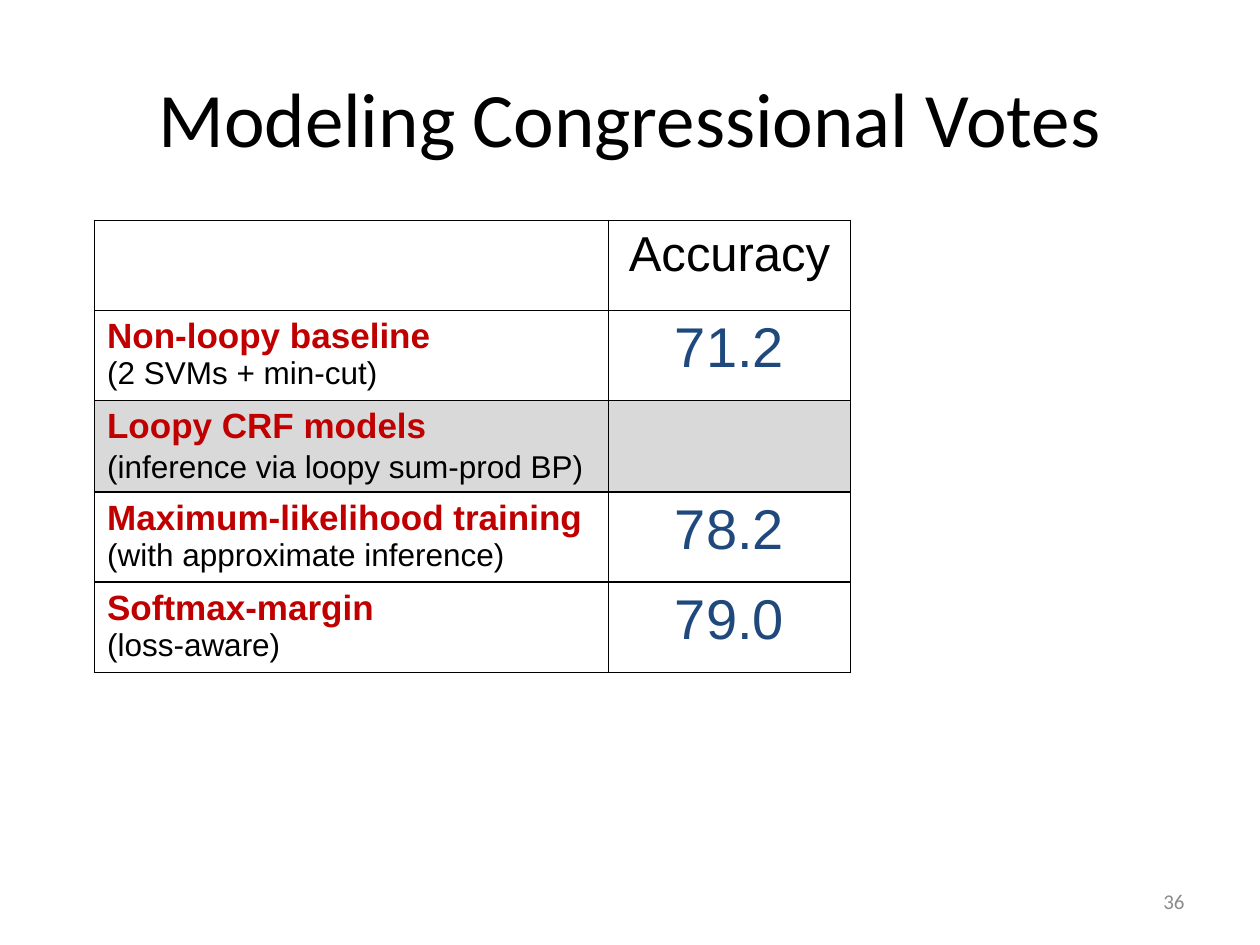
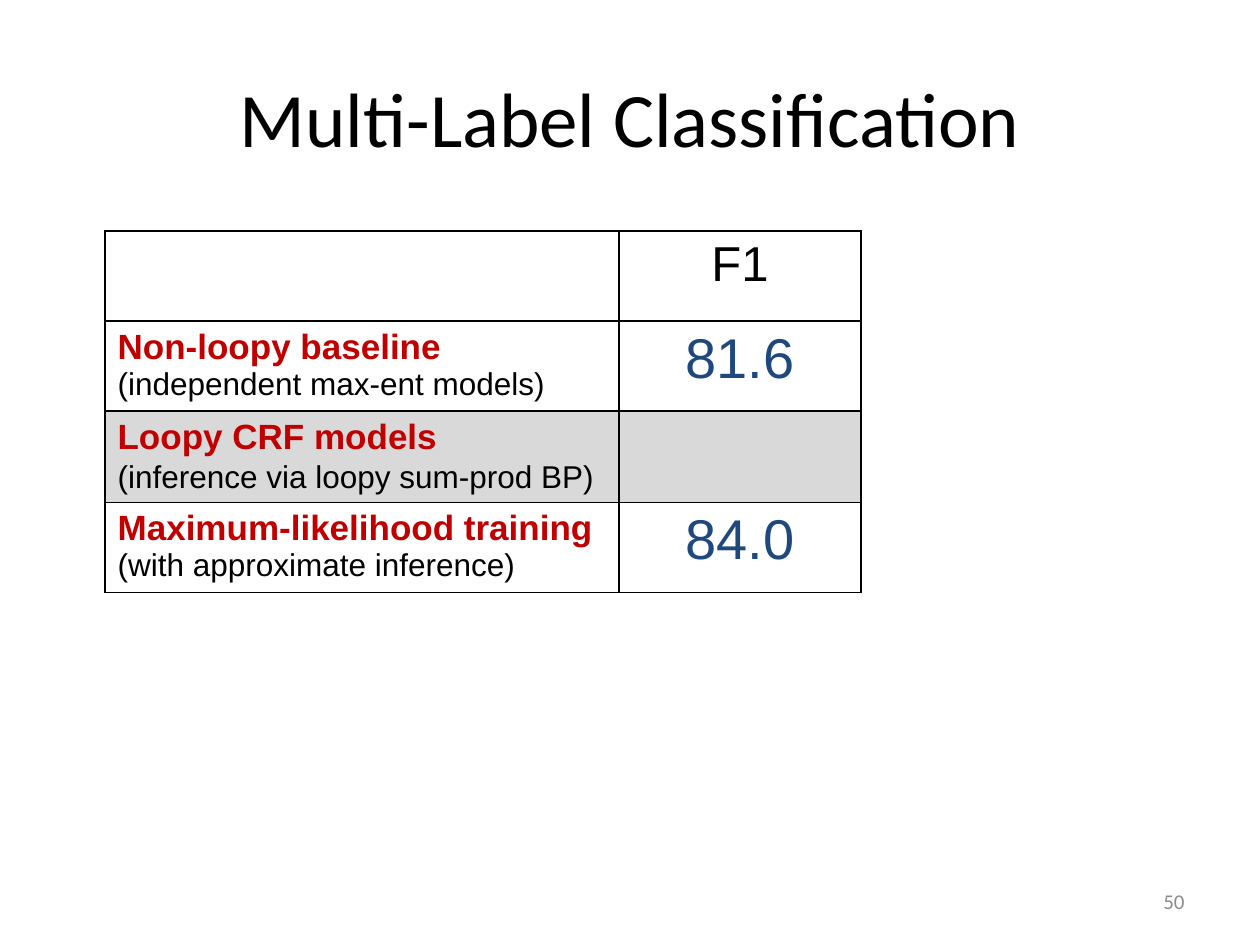
from lxml import etree
from pptx import Presentation
from pptx.dml.color import RGBColor
from pptx.enum.text import MSO_ANCHOR, PP_ALIGN
from pptx.oxml.ns import qn
from pptx.util import Pt

LEFT, CENTER, RIGHT = PP_ALIGN.LEFT, PP_ALIGN.CENTER, PP_ALIGN.RIGHT
MIDDLE = MSO_ANCHOR.MIDDLE
BLANK_LAYOUT = 6

BLACK, WHITE, GREY = "000000", "FFFFFF", "8C8C8C"
RED, NAVY, SHADE = "C00000", "1F497D", "D9D9D9"
TITLE_FONT, TABLE_FONT = "Calibri", "Arial"

COLUMN_WIDTHS = (293.75, 138.25)
ROW_HEIGHT = 51.5

# Table rows: method, note, score; a row without a score is a shaded heading
LOOPY_HEADING = ("Loopy CRF models", "(inference via loopy sum-prod BP)", "")
VOTE_ROWS = [
    ("Non-loopy baseline", "(2 SVMs + min-cut)", "71.2"),
    LOOPY_HEADING,
    ("Maximum-likelihood training", "(with approximate inference)", "78.2"),
    ("Softmax-margin", "(loss-aware)", "79.0"),
]
LABEL_ROWS = [
    ("Non-loopy baseline", "(independent max-ent models)", "81.6"),
    LOOPY_HEADING,
    ("Maximum-likelihood training", "(with approximate inference)", "84.0"),
]


def color(value):
    return RGBColor.from_string(value)


class SlideBuilder:
    """Holds the deck, its style and the current page."""

    def __init__(self):
        self.deck = Presentation()
        self.deck.slide_width, self.deck.slide_height = Pt(720), Pt(540)
        self.page = None

    def new_page(self, title, number):
        self.page = self.deck.slides.add_slide(self.deck.slide_layouts[BLANK_LAYOUT])
        self.text_box((36, 21.6, 648, 90), title, 44, BLACK, CENTER)
        self.text_box((516, 500.5, 168, 28.75), number, 12, GREY, RIGHT)

    def format_para(self, para, size, ink, align=LEFT, font=TABLE_FONT, bold=False):
        para.alignment = align
        for span in para.runs:
            span.font.name = font
            span.font.size = Pt(size)
            span.font.bold = bold
            span.font.color.rgb = color(ink)

    def text_box(self, place, text, size, ink, align):
        box = self.page.shapes.add_textbox(*map(Pt, place))
        frame = box.text_frame
        frame.word_wrap = True
        frame.vertical_anchor = MIDDLE
        frame.text = text
        self.format_para(frame.paragraphs[0], size, ink, align, TITLE_FONT)

    def style_cell(self, cell, fill):
        cell.margin_bottom = Pt(1)
        # Borders come before the fill in the cell properties
        properties = cell._tc.get_or_add_tcPr()
        for side in ("a:lnL", "a:lnR", "a:lnT", "a:lnB"):
            line = etree.SubElement(properties, qn(side), w=str(Pt(1)))
            paint = etree.SubElement(line, qn("a:solidFill"))
            etree.SubElement(paint, qn("a:srgbClr"), val=BLACK)
        cell.fill.solid()
        cell.fill.fore_color.rgb = color(fill)

    def center_cell(self, cell, text, size, ink):
        cell.text = text
        self.format_para(cell.text_frame.paragraphs[0], size, ink, CENTER)

    def method_cell(self, cell, method, note, gap):
        cell.text = method
        self.format_para(cell.text_frame.paragraphs[0], 20, RED, bold=True)
        para = cell.text_frame.add_paragraph()
        para.text = note
        para.space_before = Pt(gap)
        self.format_para(para, 18, BLACK)

    def results_table(self, left, top, measure, rows):
        count = len(rows) + 1
        place = (left, top, sum(COLUMN_WIDTHS), count * ROW_HEIGHT)
        table = self.page.shapes.add_table(count, 2, *map(Pt, place)).table
        table.first_row = table.horz_banding = False
        for column, width in zip(table.columns, COLUMN_WIDTHS):
            column.width = Pt(width)
        for row in table.rows:
            row.height = Pt(ROW_HEIGHT)

        # Header row
        for cell in table.rows[0].cells:
            self.style_cell(cell, WHITE)
        self.center_cell(table.cell(0, 1), measure, 28, BLACK)

        # Method rows
        for index, (method, note, score) in enumerate(rows, 1):
            for cell in table.rows[index].cells:
                self.style_cell(cell, WHITE if score else SHADE)
            self.method_cell(table.cell(index, 0), method, note, 0 if score else 2)
            if score:
                self.center_cell(table.cell(index, 1), score, 32, NAVY)


def main():
    builder = SlideBuilder()

    # Congressional votes
    builder.new_page("Modeling Congressional Votes", "36")
    builder.results_table(54, 126, "Accuracy", VOTE_ROWS)

    # Multi-label classification
    builder.new_page("Multi-Label Classification", "50")
    builder.results_table(60, 132, "F1", LABEL_ROWS)

    builder.deck.save("out.pptx")


if __name__ == "__main__":
    main()
